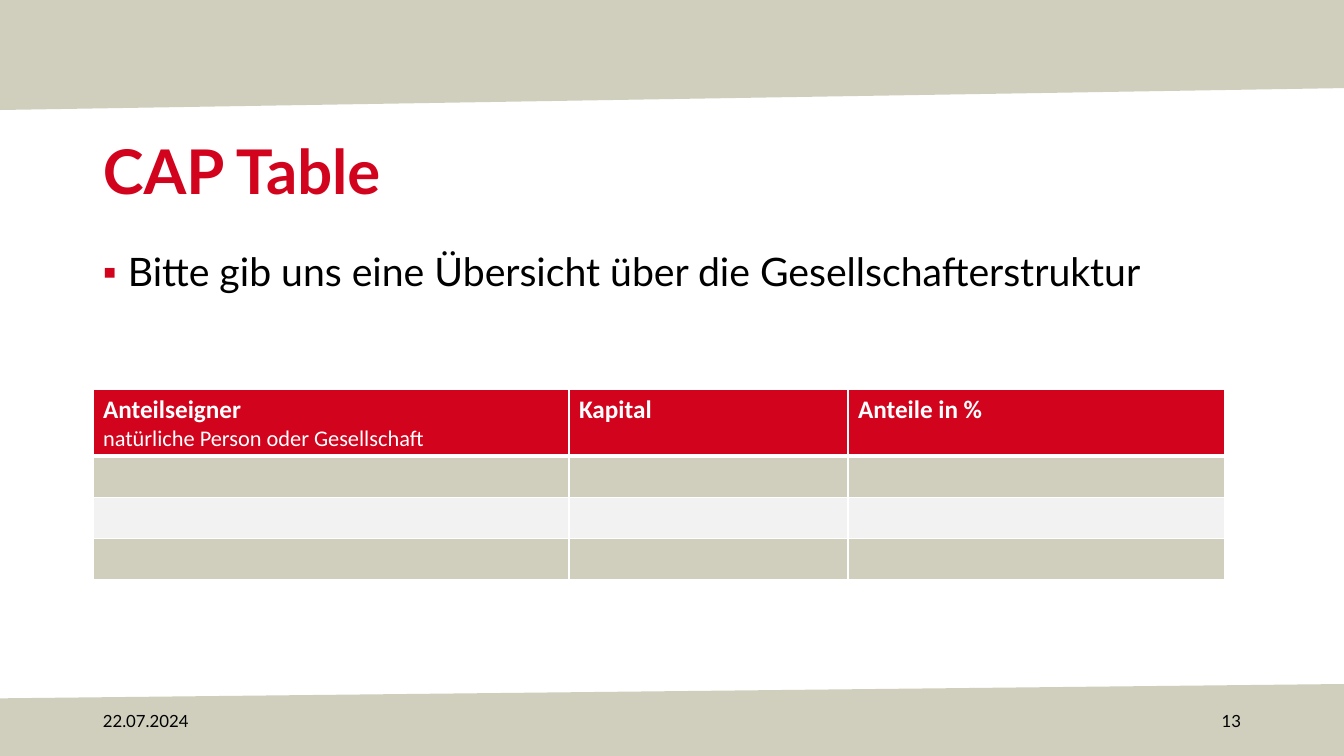
from lxml import etree
from pptx import Presentation
from pptx.dml.color import RGBColor
from pptx.enum.shapes import MSO_SHAPE
from pptx.enum.text import MSO_ANCHOR, PP_ALIGN
from pptx.oxml.ns import qn
from pptx.util import Pt

BAND = MSO_SHAPE.FLOWCHART_MANUAL_INPUT
TOP, MIDDLE = MSO_ANCHOR.TOP, MSO_ANCHOR.MIDDLE
LEFT, RIGHT = PP_ALIGN.LEFT, PP_ALIGN.RIGHT

THEME = {
    "red": "D2031D", "sand": "D0CFBD", "grey": "F2F2F2",
    "white": "FFFFFF", "black": "000000",
    "font": "Lato", "table_font": "Calibri",
    "title": 44, "body": 28, "head": 18, "sub": 16, "footer": 12,
}
PX = 914400 / 100.8


def px(*lengths):
    return [round(n * PX) for n in lengths]


def write(tf, text, size, color="black", font="font", bold=False,
          align=LEFT, anchor=TOP, spacing=None, bullet=None, new_line=False):
    tf.word_wrap = True
    tf.vertical_anchor = anchor
    p = tf.paragraphs[0]
    if bullet:
        indent = px(25)[0]
        pPr = p._p.get_or_add_pPr()
        pPr.set("marL", str(indent))
        pPr.set("indent", str(-indent))
        clr = etree.SubElement(pPr, qn("a:buClr"))
        etree.SubElement(clr, qn("a:srgbClr"), val=THEME["red"])
        etree.SubElement(pPr, qn("a:buFont"), typeface="Arial")
        etree.SubElement(pPr, qn("a:buChar"), char=bullet)
    p.alignment = align
    if spacing:
        p.line_spacing = spacing
    if new_line:
        p.add_line_break()
    r = p.add_run()
    r.text = text
    r.font.name = THEME[font]
    r.font.size = Pt(THEME[size])
    r.font.bold = bold
    r.font.color.rgb = RGBColor.from_string(THEME[color])


prs = Presentation()
prs.slide_width, prs.slide_height = px(1344, 756)
s = prs.slides.add_slide(prs.slide_layouts[6])

for top, height, rotation in [(0, 110, 180), (684, 72, 0)]:
    sp = s.shapes.add_shape(BAND, *px(0, top, 1347, height))
    sp.rotation = rotation
    sp.shadow.inherit = False
    sp.fill.solid()
    sp.fill.fore_color.rgb = RGBColor.from_string(THEME["sand"])
    sp.line.fill.background()

texts = [
    ((93, 114, 1159, 121), "CAP Table",
     dict(size="title", color="red", bold=True, anchor=MIDDLE, spacing=0.9)),
    ((93, 248, 1159, 97),
     "Bitte gib uns eine Übersicht über die Gesellschafterstruktur",
     dict(size="body", spacing=0.9, bullet="▪")),
    ((93, 701, 302, 40), "22.07.2024", dict(size="footer", anchor=MIDDLE)),
    ((1191, 701, 60, 40), "13",
     dict(size="footer", align=RIGHT, anchor=MIDDLE)),
]
for box, text, style in texts:
    write(s.shapes.add_textbox(*px(*box)).text_frame, text, **style)

headers = ["Anteilseigner", "Kapital", "Anteile in %"]
col_widths = [476, 279, 377]
row_heights = [67, 41, 41, 41]
row_fills = ["red", "sand", "grey", "sand"]
table = s.shapes.add_table(
    len(row_heights), len(col_widths),
    *px(93, 389, sum(col_widths), sum(row_heights))).table
for col, width in zip(table.columns, px(*col_widths)):
    col.width = width
for row, height in zip(table.rows, px(*row_heights)):
    row.height = height

for i, fill in enumerate(row_fills):
    for cell in table.rows[i].cells:
        tcPr = cell._tc.get_or_add_tcPr()
        for side in "LRTB":
            thick = (i, side) in [(0, "B"), (1, "T")]
            ln = etree.SubElement(tcPr, qn(f"a:ln{side}"),
                                  w=str(Pt(3 if thick else 1)))
            solid = etree.SubElement(ln, qn("a:solidFill"))
            etree.SubElement(solid, qn("a:srgbClr"), val=THEME["white"])
        cell.fill.solid()
        cell.fill.fore_color.rgb = RGBColor.from_string(THEME[fill])

for cell, text in zip(table.rows[0].cells, headers):
    write(cell.text_frame, text, "head", "white", "table_font", bold=True)
write(table.cell(0, 0).text_frame, "natürliche Person oder Gesellschaft",
      "sub", "white", "table_font", new_line=True)

prs.save("out.pptx")
